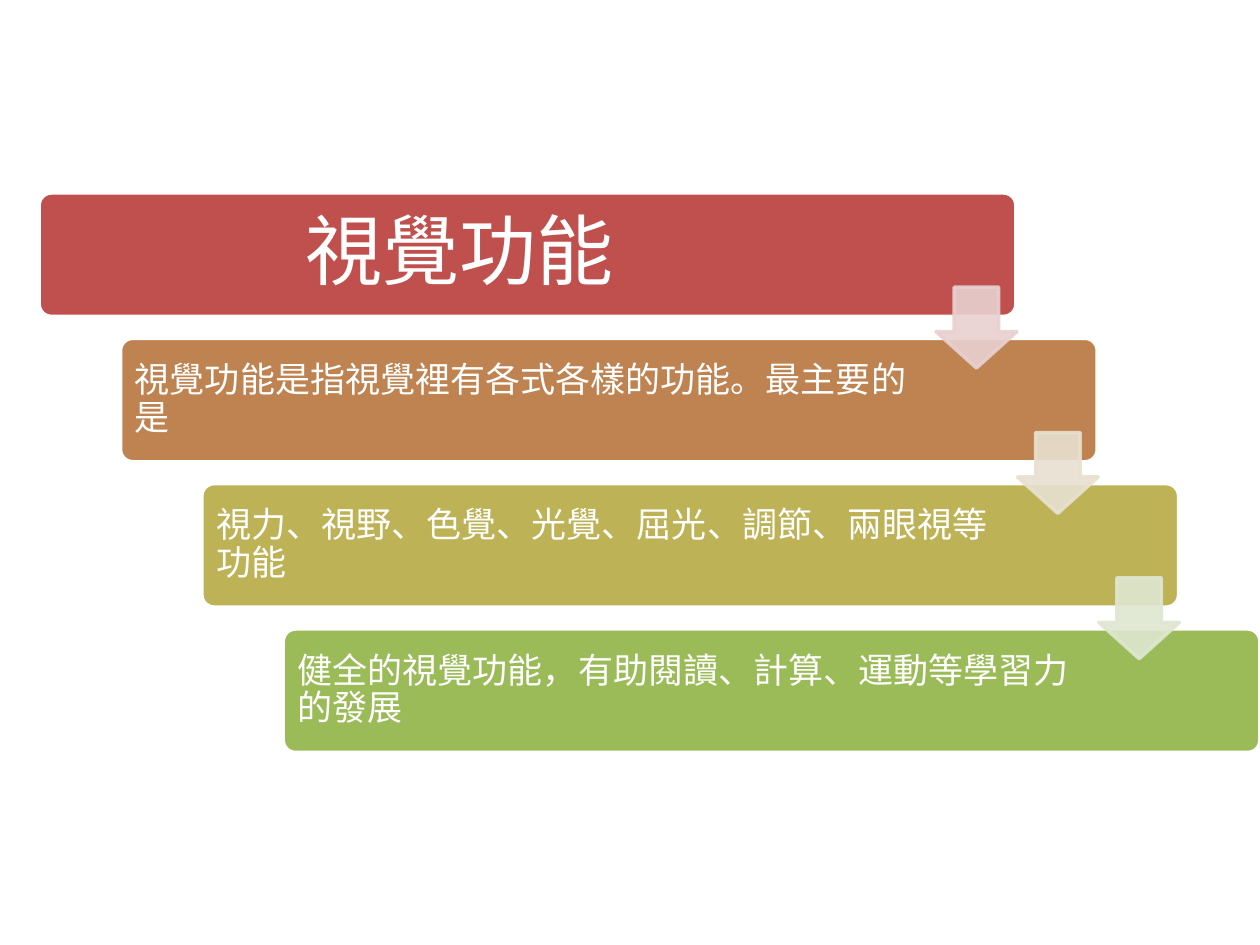
import pptx
import pptx.util
import pptx.dml.color
import pptx.enum.shapes
import pptx.enum.text
import pptx.oxml.ns
import lxml.etree

Cm = pptx.util.Cm
Pt = pptx.util.Pt
SHAPES = pptx.enum.shapes.MSO_SHAPE
ALIGN = pptx.enum.text.PP_ALIGN
qn = pptx.oxml.ns.qn

FONT = "Noto Sans CJK SC"
COLORS = {
    "white": "FFFFFF",
    "red": "C0504D",
    "brown": "BE8351",
    "olive": "BDB255",
    "green": "9BBB59",
    "pale red": "E8D0D0",
    "pale brown": "E8E1D1",
    "pale green": "DEE7D1",
}
TITLE = {"size": 44, "align": ALIGN.CENTER, "inset": 0.46, "width": 16.79}
BODY = {"size": 20, "align": ALIGN.LEFT, "inset": 0.21, "width": 16.29}
STEPS = [
    ("視覺功能", "red", TITLE),
    ("視覺功能是指視覺裡有各式各樣的功能。最主要的是", "brown", BODY),
    ("視力、視野、色覺、光覺、屈光、調節、兩眼視等功能", "olive", BODY),
    ("健全的視覺功能，有助閱讀、計算、運動等學習力的發展", "green", BODY),
]
ARROWS = ["pale red", "pale brown", "pale green"]

LEFT, TOP = 0.79, 3.89
STEP_X, STEP_Y = 1.64, 2.93
BAR_WIDTH, BAR_HEIGHT = 19.69, 2.49
TEXT_MARGIN = 0.08
ARROW_X, ARROW_Y, ARROW_SIZE = 18.08, 1.9, 1.63
ARROW_OPACITY = 90


def rgb(name):
    return pptx.dml.color.RGBColor.from_string(COLORS[name])


def set_attributes(target, values):
    for name, value in values.items():
        setattr(target, name, value)


def add_block(slide, kind, box, adjustments, fill, line):
    shape = slide.shapes.add_shape(kind, *map(Cm, box))
    shape.shadow.inherit = False
    for index, value in enumerate(adjustments):
        shape.adjustments[index] = value
    shape.fill.solid()
    shape.fill.fore_color.rgb = rgb(fill)
    shape.line.color.rgb = rgb(line)
    shape.line.width = Pt(2)
    return shape


def add_label(slide, text, left, top, style):
    box = (left, top, style["width"], BAR_HEIGHT - 2 * TEXT_MARGIN)
    frame = slide.shapes.add_textbox(*map(Cm, box)).text_frame
    inset = Cm(style["inset"])
    set_attributes(frame, {
        "word_wrap": True,
        "vertical_anchor": pptx.enum.text.MSO_ANCHOR.MIDDLE,
        "margin_left": inset,
        "margin_top": inset,
        "margin_right": inset,
        "margin_bottom": inset,
    })
    paragraph = frame.paragraphs[0]
    set_attributes(paragraph, {"alignment": style["align"], "line_spacing": 0.9})
    run = paragraph.add_run()
    run.text = text
    set_attributes(run.font, {"size": Pt(style["size"]), "name": FONT})
    run.font.color.rgb = rgb("white")
    properties = run.font._element
    lxml.etree.SubElement(properties, qn("a:ea"), typeface=FONT)


def set_opacity(shape, percent):
    for color in shape._element.spPr.iter(qn("a:srgbClr")):
        lxml.etree.SubElement(color, qn("a:alpha"), val=str(percent * 1000))


def main():
    presentation = pptx.Presentation()
    set_attributes(presentation, {"slide_width": Cm(25.4), "slide_height": Cm(19.05)})
    slide = presentation.slides.add_slide(presentation.slide_layouts[6])
    corners = [(LEFT + i * STEP_X, TOP + i * STEP_Y) for i in range(len(STEPS))]

    for (left, top), (text, color, style) in zip(corners, STEPS):
        bar = (left, top, BAR_WIDTH, BAR_HEIGHT)
        add_block(slide, SHAPES.ROUNDED_RECTANGLE, bar, [0.1], color, "white")
        add_label(slide, text, left + TEXT_MARGIN, top + TEXT_MARGIN, style)

    for (left, top), color in zip(corners, ARROWS):
        box = (left + ARROW_X, top + ARROW_Y, ARROW_SIZE, ARROW_SIZE)
        arrow = add_block(slide, SHAPES.DOWN_ARROW, box, [0.55, 0.45], color, color)
        set_opacity(arrow, ARROW_OPACITY)

    presentation.save("out.pptx")


if __name__ == "__main__":
    main()
